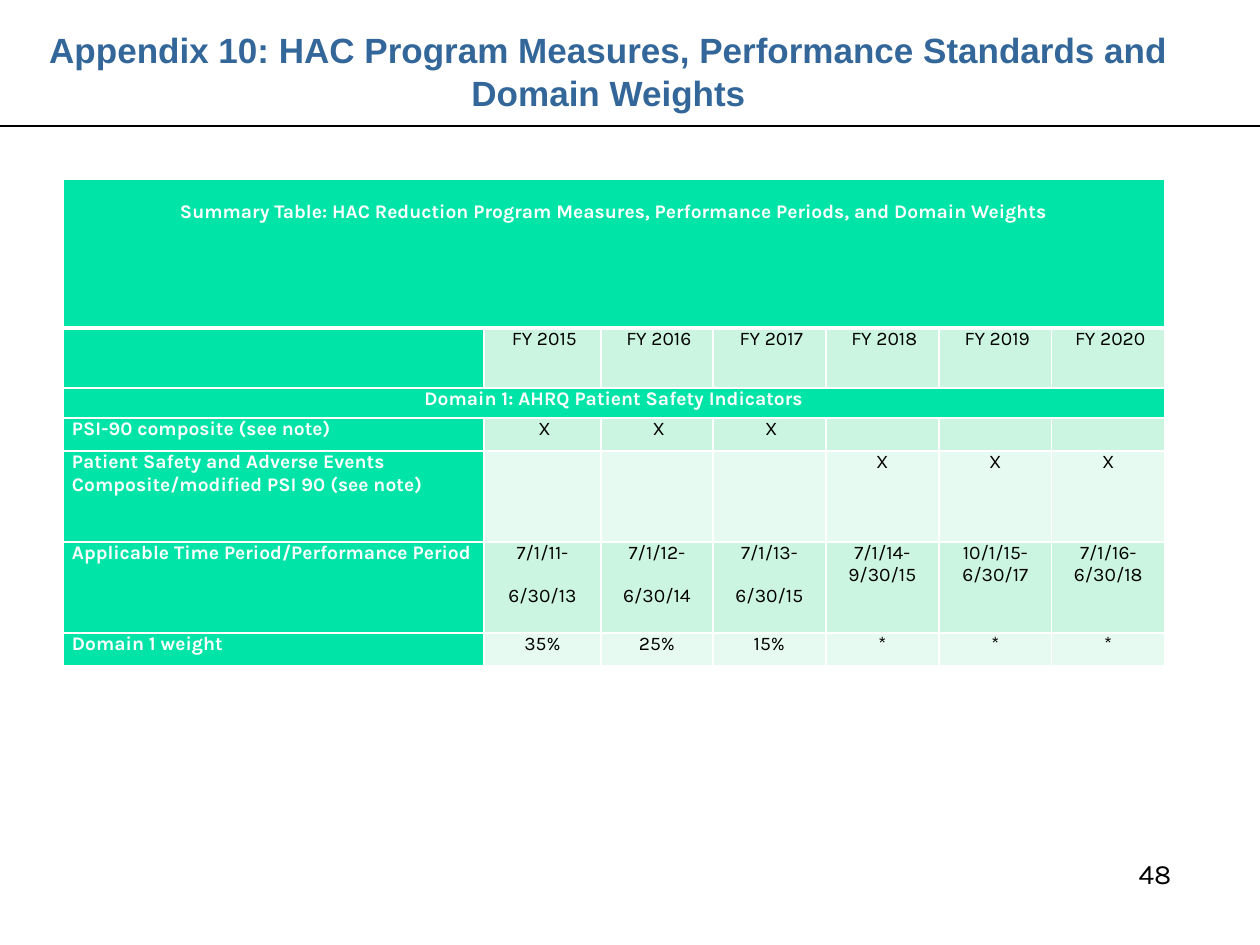
from lxml import etree
from pptx import Presentation
from pptx.dml.color import RGBColor
from pptx.enum.shapes import MSO_CONNECTOR
from pptx.enum.text import MSO_ANCHOR, MSO_AUTO_SIZE, PP_ALIGN
from pptx.oxml.ns import qn
from pptx.util import Pt

CENTER, LEFT = PP_ALIGN.CENTER, PP_ALIGN.LEFT
MIDDLE, TOP = MSO_ANCHOR.MIDDLE, MSO_ANCHOR.TOP
STRAIGHT = MSO_CONNECTOR.STRAIGHT
NO_AUTOFIT = MSO_AUTO_SIZE.NONE
PX = 914400 // 126
TITLE_ONLY = 5
COLORS = {
    "title": "336699", "text": "000000", "white": "FFFFFF",
    "green": "00E4A8", "mint": "CCF5E1", "pale": "E7FAF1",
}


def add_run(paragraph, text, font, size, color, bold=False):
    run = paragraph.add_run()
    run.text = text
    run.font.name = font
    run.font.size = Pt(size)
    run.font.bold = bold
    run.font.color.rgb = RGBColor.from_string(COLORS[color])


def add_borders(cell, bottom_width):
    properties = cell._tc.get_or_add_tcPr()
    for side, width in (("L", 1), ("R", 1), ("T", 1), ("B", bottom_width)):
        line = etree.SubElement(properties, qn(f"a:ln{side}"), w=str(Pt(width)))
        fill = etree.SubElement(line, qn("a:solidFill"))
        etree.SubElement(fill, qn("a:srgbClr"), val=COLORS["white"])


presentation = Presentation()
presentation.slide_width = 1260 * PX
presentation.slide_height = 945 * PX
slide = presentation.slides.add_slide(presentation.slide_layouts[TITLE_ONLY])

# Title
title = slide.shapes.title
title.left, title.top, title.width, title.height = 10 * PX, 3 * PX, 1197 * PX, 136 * PX
title.text_frame.auto_size = NO_AUTOFIT
title.text_frame.vertical_anchor = MIDDLE
paragraph = title.text_frame.paragraphs[0]
paragraph.alignment = CENTER
add_run(paragraph, "Appendix 10: HAC Program Measures, Performance Standards and Domain Weights",
        "Arial", 20, "title", True)

# Rule under the title
rule = slide.shapes.add_connector(STRAIGHT, 0, 126 * PX, 1260 * PX, 126 * PX)
rule.line.color.rgb = RGBColor.from_string(COLORS["text"])
rule.line.width = Pt(0.75)
etree.SubElement(rule._element.spPr, qn("a:effectLst"))

# Table content: fill of the value cells, then the texts from left to right
rows = [
    ("green", ["Summary Table: HAC Reduction Program Measures, Performance Periods, and Domain Weights"]),
    ("mint", [""] + [f"FY {year}" for year in range(2015, 2021)]),
    ("green", ["Domain 1: AHRQ Patient Safety Indicators"]),
    ("mint", ["PSI-90 composite (see note)", "X", "X", "X", "", "", ""]),
    ("pale", ["Patient Safety and Adverse Events Composite/modified PSI 90 (see note)",
              "", "", "", "X", "X", "X"]),
    ("mint", ["Applicable Time Period/Performance Period",
              "7/1/11-\n6/30/13", "7/1/12-\n6/30/14", "7/1/13-\n6/30/15",
              "7/1/14- 9/30/15", "10/1/15-6/30/17", "7/1/16-6/30/18"]),
    ("pale", ["Domain 1 weight", "35%", "25%", "15%", "*", "*", "*"]),
]
column_widths = [421, 117, 112, 113, 113, 113, 113]
row_heights = [149, 60, 30, 33, 91, 91, 33]
SPAN_ROWS = (0, 2)
INDENTED_ROWS = (1, 3)

# Table
table = slide.shapes.add_table(
    len(rows), len(column_widths), 63 * PX, 179 * PX,
    sum(column_widths) * PX, sum(row_heights) * PX).table
table.first_row = False
table.horz_banding = False
for column, width in zip(table.columns, column_widths):
    column.width = width * PX
for row, height in zip(table.rows, row_heights):
    row.height = height * PX

for row_index, (value_fill, texts) in enumerate(rows):
    spans = row_index in SPAN_ROWS
    if spans:
        table.cell(row_index, 0).merge(table.cell(row_index, len(column_widths) - 1))
    for column_index in range(len(column_widths)):
        cell = table.cell(row_index, column_index)
        is_label = column_index == 0
        indent = 4 if row_index in INDENTED_ROWS and not is_label else 0
        cell.margin_left, cell.margin_right = (9 + indent) * PX, 9 * PX
        cell.margin_top = (22 if row_index == 0 else 0) * PX
        cell.margin_bottom = 0
        cell.vertical_anchor = TOP
        add_borders(cell, 3 if row_index == 0 else 1)
        cell.fill.solid()
        fill_name = "green" if is_label else value_fill
        cell.fill.fore_color.rgb = RGBColor.from_string(COLORS[fill_name])

        frame = cell.text_frame
        text = texts[column_index] if column_index < len(texts) else ""
        if not text:
            etree.SubElement(frame.paragraphs[0]._p, qn("a:endParaRPr"), sz="1100")
            continue
        lines = text.split("\n")
        for line_index, line in enumerate(lines):
            paragraph = frame.add_paragraph() if line_index else frame.paragraphs[0]
            paragraph.alignment = CENTER if spans or not is_label else LEFT
            if line_index < len(lines) - 1:
                paragraph.space_after = Pt(12)
            add_run(paragraph, line, "Karla", 11, "white" if is_label else "text", is_label)

# Page number
page_number = slide.shapes.add_textbox(1113 * PX, 850 * PX, 84 * PX, 95 * PX)
page_number.text_frame.word_wrap = True
paragraph = page_number.text_frame.paragraphs[0]
paragraph.alignment = CENTER
add_run(paragraph, "48", "Karla", 16, "text")

presentation.save("out.pptx")
